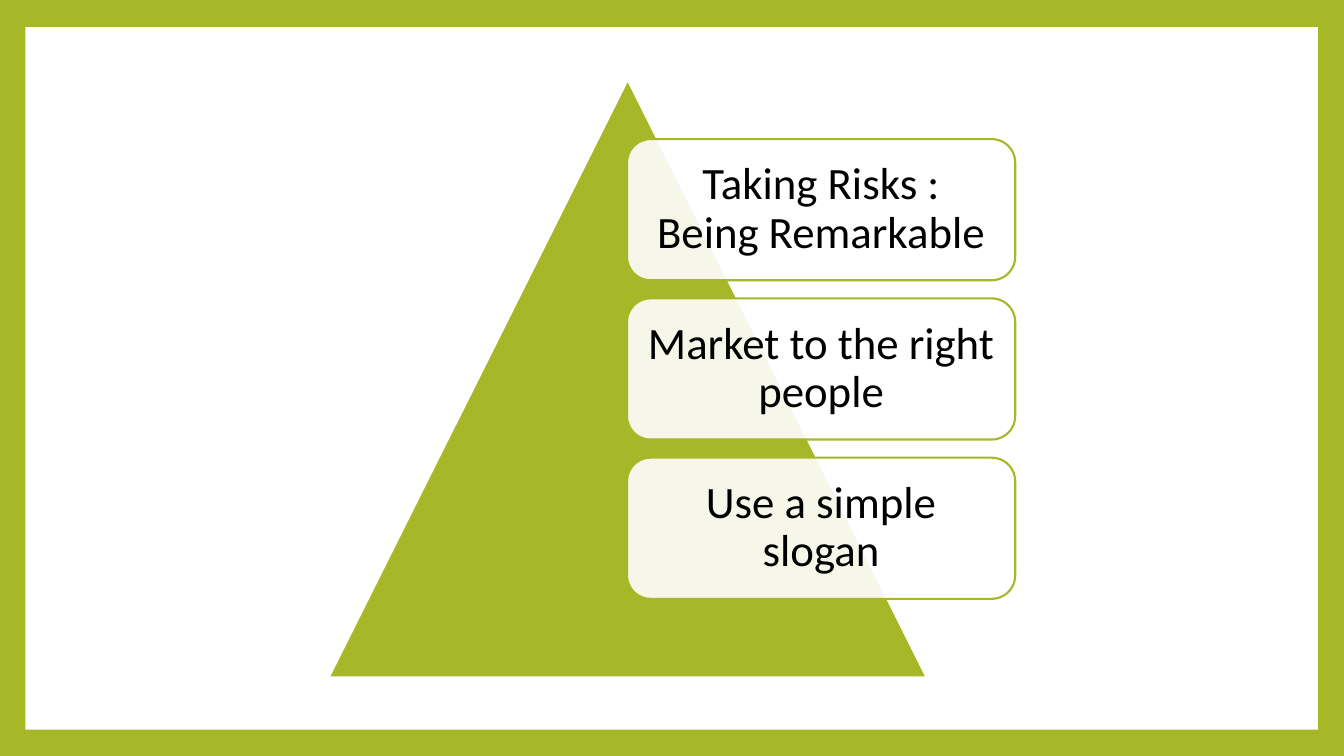
import pptx
import pptx.dml.color
import pptx.enum.shapes
import pptx.enum.text
import pptx.oxml.ns
import pptx.util
import lxml.etree

rgb = pptx.dml.color.RGBColor.from_string
kinds = pptx.enum.shapes.MSO_SHAPE
theme = {
    "green": rgb("A6B727"),
    "white": rgb("FFFFFF"),
    "black": rgb("000000"),
    "font": "Calibri",
    "size": pptx.util.Pt(32),
    "edge": pptx.util.Pt(1.5),
    "alpha": "90000",
}

deck = pptx.Presentation()
deck.slide_width = pptx.util.Inches(13.33)
deck.slide_height = pptx.util.Inches(7.5)
slide = deck.slides.add_slide(deck.slide_layouts[6])
slide.background.fill.solid()
slide.background.fill.fore_color.rgb = theme["green"]


def draw(kind, left, top, width, height, fill, line=None):
    wide, high = deck.slide_width / 100, deck.slide_height / 100
    shape = slide.shapes.add_shape(
        kind, round(left * wide), round(top * high), round(width * wide), round(height * high))
    shape.shadow.inherit = False
    shape.fill.solid()
    shape.fill.fore_color.rgb = theme[fill]
    if line:
        shape.line.color.rgb = theme[line]
        shape.line.width = theme["edge"]
    else:
        shape.line.fill.background()
    return shape


draw(kinds.RECTANGLE, 1.88, 3.6, 96.18, 92.93, "white")
draw(kinds.ISOSCELES_TRIANGLE, 24.46, 10.53, 44.49, 79.07, "green", "white")

inset = pptx.util.Inches(0.13)
frame = {
    "word_wrap": True,
    "vertical_anchor": pptx.enum.text.MSO_ANCHOR.MIDDLE,
    "margin_left": inset,
    "margin_right": inset,
    "margin_top": inset,
    "margin_bottom": inset,
}
para = {"alignment": pptx.enum.text.PP_ALIGN.CENTER, "line_spacing": 0.9}
font = {"name": theme["font"], "size": theme["size"]}
tips = ["Taking Risks\u00a0: Being Remarkable", "Market to the right people", "Use a simple slogan"]
first, step = 18.4, 21.07

for row, tip in enumerate(tips):
    card = draw(kinds.ROUNDED_RECTANGLE, 46.66, first + row * step, 28.88, 18.67, "white", "green")
    tone = card.fill._xPr.find(".//" + pptx.oxml.ns.qn("a:srgbClr"))
    lxml.etree.SubElement(tone, pptx.oxml.ns.qn("a:alpha"), val=theme["alpha"])
    text = card.text_frame
    text.text = tip
    line = text.paragraphs[0]
    for part, look in ((text, frame), (line, para), (line.runs[0].font, font)):
        for key, value in look.items():
            setattr(part, key, value)
    line.runs[0].font.color.rgb = theme["black"]

deck.save("out.pptx")
